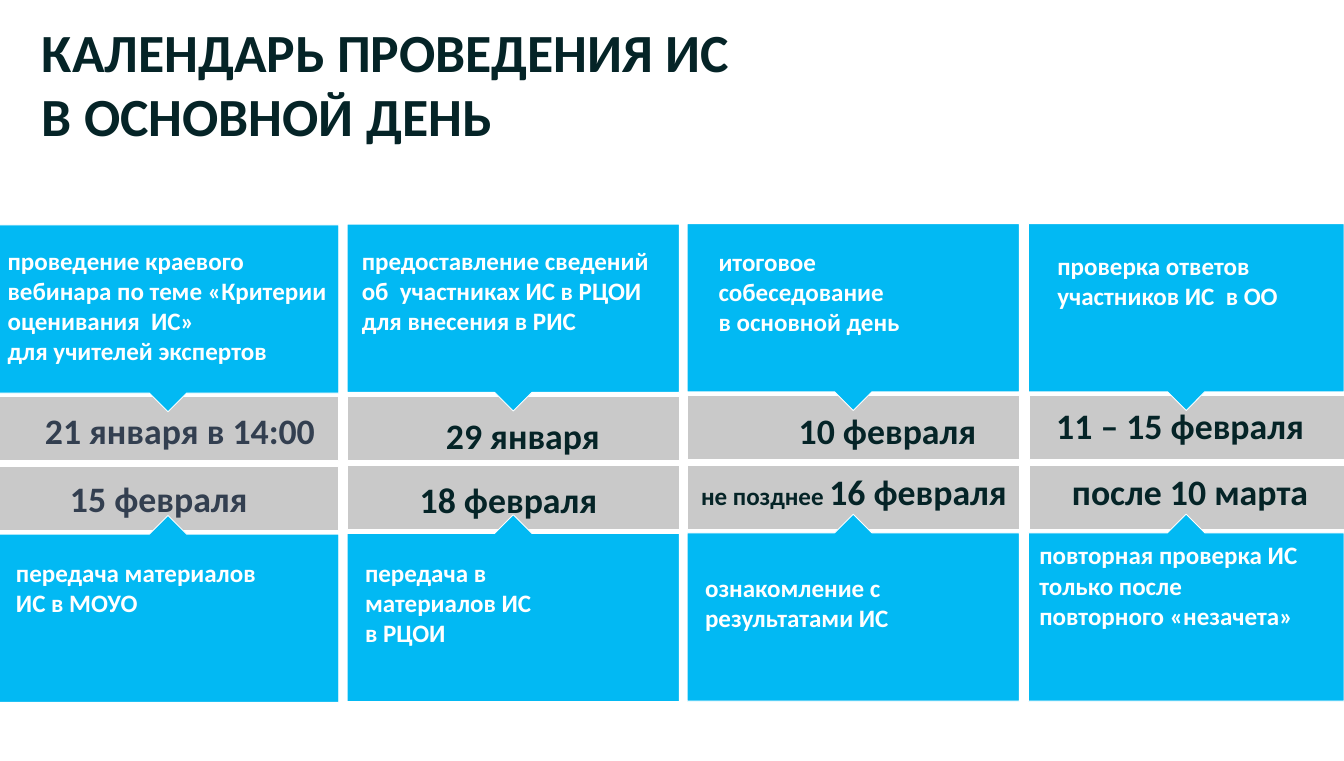
from dataclasses import dataclass

from pptx import Presentation
from pptx.dml.color import RGBColor
from pptx.enum.shapes import MSO_SHAPE
from pptx.enum.text import MSO_ANCHOR, MSO_AUTO_SIZE, PP_ALIGN
from pptx.util import Emu, Pt

PX = 9144


@dataclass(frozen=True)
class Theme:
    font: str = "Calibri"
    ink: str = "052427"
    slate: str = "333F50"
    white: str = "FFFFFF"
    gray: str = "C9C9C9"
    blue: str = "02B9F3"
    title_size: int = 60
    date_size: int = 40
    event_size: int = 28
    outline: int = 1


class CalendarSlide:
    def __init__(self, deck, theme):
        self.theme = theme
        self.page = deck.slides.add_slide(deck.slide_layouts[5])

    def place(self, box, area):
        box.left, box.top, box.width, box.height = (Emu(value * PX) for value in area)

    def fill_text(self, box, lines, size, color, align=PP_ALIGN.LEFT):
        frame = box.text_frame
        frame.word_wrap = True
        frame.auto_size = MSO_AUTO_SIZE.SHAPE_TO_FIT_TEXT
        frame.vertical_anchor = MSO_ANCHOR.TOP
        frame.text = "\n".join(lines)
        for paragraph in frame.paragraphs:
            paragraph.alignment = align
            paragraph.line_spacing = 1.0
            paragraph.space_before = Pt(0)
            paragraph.font.name = self.theme.font
            paragraph.font.size = Pt(size)
            paragraph.font.bold = True
            paragraph.font.color.rgb = RGBColor.from_string(color)
        return frame

    def title(self, lines, area):
        box = self.page.shapes.title
        self.place(box, area)
        self.fill_text(box, lines, self.theme.title_size, self.theme.ink)

    def text(self, lines, area, size, color, align=PP_ALIGN.LEFT):
        box = self.page.shapes.add_textbox(0, 0, 0, 0)
        self.place(box, area)
        return self.fill_text(box, lines, size, color, align)

    def event(self, lines, area):
        self.text(lines, area, self.theme.event_size, self.theme.white)

    def date(self, label, area, color, prefix=""):
        frame = self.text([label], area, self.theme.date_size, color, PP_ALIGN.CENTER)
        if prefix:
            paragraph = frame.paragraphs[0]
            paragraph.line_spacing = 0.9
            paragraph.runs[0].text = prefix
            paragraph.runs[0].font.size = Pt(self.theme.event_size)
            span = paragraph.add_run()
            span.text = label

    def panel(self, kind, area, fill):
        box = self.page.shapes.add_shape(kind, 0, 0, 0, 0)
        self.place(box, area)
        box.shadow.inherit = False
        box.fill.solid()
        box.fill.fore_color.rgb = RGBColor.from_string(fill)
        box.line.color.rgb = RGBColor.from_string(self.theme.white)
        box.line.width = Pt(self.theme.outline)
        return box

    def bar(self, area):
        self.panel(MSO_SHAPE.RECTANGLE, area, self.theme.gray)

    def callout(self, area, upward=False):
        box = self.panel(MSO_SHAPE.DOWN_ARROW_CALLOUT, area, self.theme.blue)
        for index, value in enumerate((0.24, 0.1, 0.1, 0.9)):
            box.adjustments[index] = value
        if upward:
            box._element.spPr.xfrm.set("flipV", "1")

    def column(self, left, top, width):
        for offset in (267, 375):
            self.bar((left + 1, top + offset, width - 1, 99))
        self.callout((left, top, width, 290))
        self.callout((left, top + 451, width, 290), upward=True)


COLUMNS = [(-4, 349, 530), (539, 348, 516), (1067, 347, 516), (1597, 347, 490)]

EVENTS = [
    (["проведение краевого вебинара по теме «Критерии оценивания  ИС»",
      "для учителей экспертов"], (2, 376, 544, 199)),
    (["предоставление сведений об  участниках ИС в РЦОИ для внесения в РИС"],
     (552, 376, 467, 151)),
    (["итоговое собеседование", "в основной день"], (1106, 377, 340, 151)),
    (["проверка ответов участников ИС  в ОО"], (1632, 384, 401, 104)),
    (["передача материалов ИС в МОУО"], (15, 860, 414, 104)),
    (["передача в материалов ИС", "в РЦОИ"], (557, 860, 395, 151)),
    (["ознакомление с результатами ИС"], (1085, 883, 428, 104)),
    (["повторная проверка ИС только после повторного «незачета»"],
     (1604, 833, 429, 151)),
]


def main():
    theme = Theme()
    deck = Presentation()
    deck.slide_width, deck.slide_height = Emu(2087 * PX), Emu(1181 * PX)
    slide = CalendarSlide(deck, theme)
    slide.title(["КАЛЕНДАРЬ ПРОВЕДЕНИЯ ИС", "В ОСНОВНОЙ ДЕНЬ"], (55, 24, 1154, 212))
    for left, top, width in COLUMNS:
        slide.column(left, top, width)
    for lines, area in EVENTS:
        slide.event(lines, area)
    dates = [
        ("21 января в 14:00", (3, 630, 553, 77), theme.slate),
        ("29 января", (664, 637, 296, 77), theme.ink),
        ("10 февраля", (1209, 630, 338, 77), theme.ink),
        ("11 – 15 февраля", (1537, 621, 591, 77), theme.ink),
        ("15 февраля", (76, 735, 341, 77), theme.slate),
        ("18 февраля", (627, 737, 325, 77), theme.ink),
        ("16 февраля", (862, 732, 928, 71), theme.ink, "не позднее "),
        ("после 10 марта", (1572, 724, 552, 77), theme.ink),
    ]
    for entry in dates:
        slide.date(*entry)
    deck.save("out.pptx")


if __name__ == "__main__":
    main()
